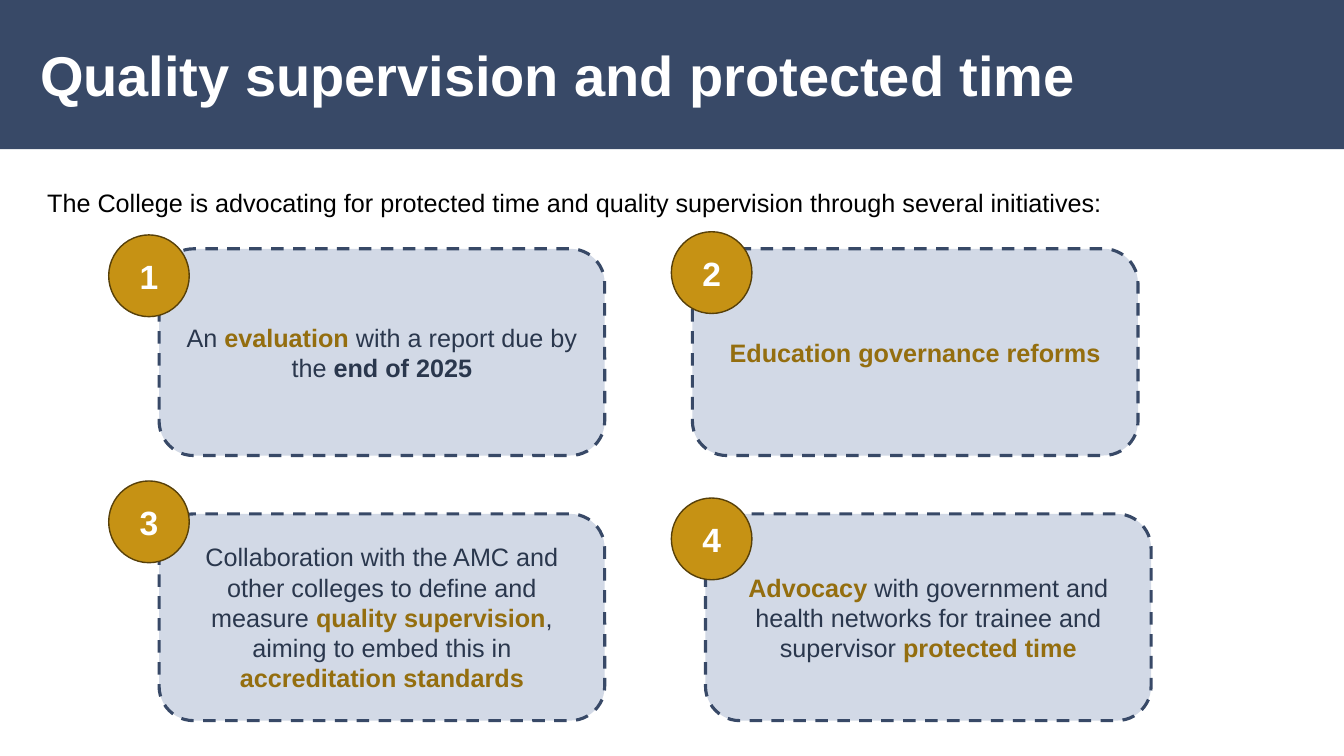
from pptx import Presentation
from pptx.dml.color import RGBColor
from pptx.enum import dml, shapes, text
from pptx.util import Cm, Pt

NAVY = RGBColor(0x38, 0x49, 0x67)
PALE_BLUE = RGBColor(0xD2, 0xD9, 0xE6)
INK = RGBColor(0x2A, 0x37, 0x4D)
GOLD = RGBColor(0xC6, 0x92, 0x14)
DARK_GOLD = RGBColor(0x94, 0x6E, 0x0F)
BROWN = RGBColor(0x57, 0x40, 0x09)
WHITE = RGBColor(0xFF, 0xFF, 0xFF)
BLACK = RGBColor(0x00, 0x00, 0x00)

FONT = "Arial"
SLIDE_WIDTH, SLIDE_HEIGHT = 33.87, 19.05
CARD_WIDTH, CARD_HEIGHT = 11.23, 5.21
BADGE_WIDTH, BADGE_HEIGHT = 2.03, 2.06
LEFT_COLUMN, RIGHT_COLUMN = 4.01, 17.45
TOP_ROW, BOTTOM_ROW = 6.27, 12.95

PLAIN = (INK, False)
STRONG = (INK, True)
KEY = (DARK_GOLD, True)

INITIATIVES = [
    (LEFT_COLUMN, TOP_ROW, -1.27, -0.35, [
        ("An ", PLAIN), ("evaluation", KEY),
        (" with a report due by the ", PLAIN), ("end of 2025", STRONG)]),
    (RIGHT_COLUMN, TOP_ROW, -0.53, -0.43, [
        ("Education governance reforms", KEY)]),
    (LEFT_COLUMN, BOTTOM_ROW, -1.27, -0.83, [
        ("Collaboration with the AMC and other colleges to define and measure ", PLAIN),
        ("quality supervision", KEY),
        (", aiming to embed this in ", PLAIN),
        ("accreditation standards", KEY)]),
    (RIGHT_COLUMN + 0.33, BOTTOM_ROW, -0.86, -0.4, [
        ("Advocacy", KEY),
        (" with government and health networks for trainee and supervisor ", PLAIN),
        ("protected time", KEY)]),
]


def style_paragraph(paragraph, size, color, bold=False):
    paragraph.font.name = FONT
    paragraph.font.size = Pt(size)
    paragraph.font.bold = bold
    paragraph.font.color.rgb = color


def add_box(slide, kind, left, top, width, height, fill):
    shape = slide.shapes.add_shape(kind, Cm(left), Cm(top), Cm(width), Cm(height))
    shape.shadow.inherit = False
    shape.fill.solid()
    shape.fill.fore_color.rgb = fill
    frame = shape.text_frame
    frame.word_wrap = True
    frame.vertical_anchor = text.MSO_ANCHOR.MIDDLE
    frame.paragraphs[0].alignment = text.PP_ALIGN.CENTER
    return shape


def add_label(slide, left, top, width, height, words, size, color, bold=False):
    label = slide.shapes.add_textbox(Cm(left), Cm(top), Cm(width), Cm(height))
    label.text_frame.word_wrap = True
    paragraph = label.text_frame.paragraphs[0]
    paragraph.text = words
    style_paragraph(paragraph, size, color, bold)


def add_header(slide, left, top, width, height):
    band = add_box(slide, shapes.MSO_SHAPE.RECTANGLE, left, top, width, height, NAVY)
    band.line.fill.background()
    add_label(slide, left + 0.76, top + 0.89, width - 2.02, 1.96,
              "Quality supervision and protected time", 40, WHITE, True)


def add_badge(slide, left, top, number):
    badge = add_box(slide, shapes.MSO_SHAPE.OVAL, left, top,
                    BADGE_WIDTH, BADGE_HEIGHT, GOLD)
    badge.line.color.rgb = BROWN
    badge.line.width = Pt(1)
    paragraph = badge.text_frame.paragraphs[0]
    paragraph.text = str(number)
    style_paragraph(paragraph, 24, WHITE, True)


def add_initiative(slide, left, top, badge_dx, badge_dy, phrases, number):
    card = add_box(slide, shapes.MSO_SHAPE.ROUNDED_RECTANGLE, left, top,
                   CARD_WIDTH, CARD_HEIGHT, PALE_BLUE)
    card.line.color.rgb = NAVY
    card.line.width = Pt(2.25)
    card.line.dash_style = dml.MSO_LINE.DASH
    paragraph = card.text_frame.paragraphs[0]
    style_paragraph(paragraph, 18, INK)
    for words, (color, bold) in phrases:
        run = paragraph.add_run()
        run.text = words
        run.font.color.rgb = color
        run.font.bold = bold
    add_badge(slide, left + badge_dx, top + badge_dy, number)


def main():
    presentation = Presentation()
    presentation.slide_width = Cm(SLIDE_WIDTH)
    presentation.slide_height = Cm(SLIDE_HEIGHT)
    slide = presentation.slides.add_slide(presentation.slide_layouts[6])
    add_header(slide, 0, 0, SLIDE_WIDTH, 3.76)
    add_label(slide, 0.94, 4.6, 27.71, 1.8,
              "The College is advocating for protected time and quality "
              "supervision through several initiatives:", 18, BLACK)
    for number, initiative in enumerate(INITIATIVES, 1):
        add_initiative(slide, *initiative, number)
    presentation.save("out.pptx")


if __name__ == "__main__":
    main()
